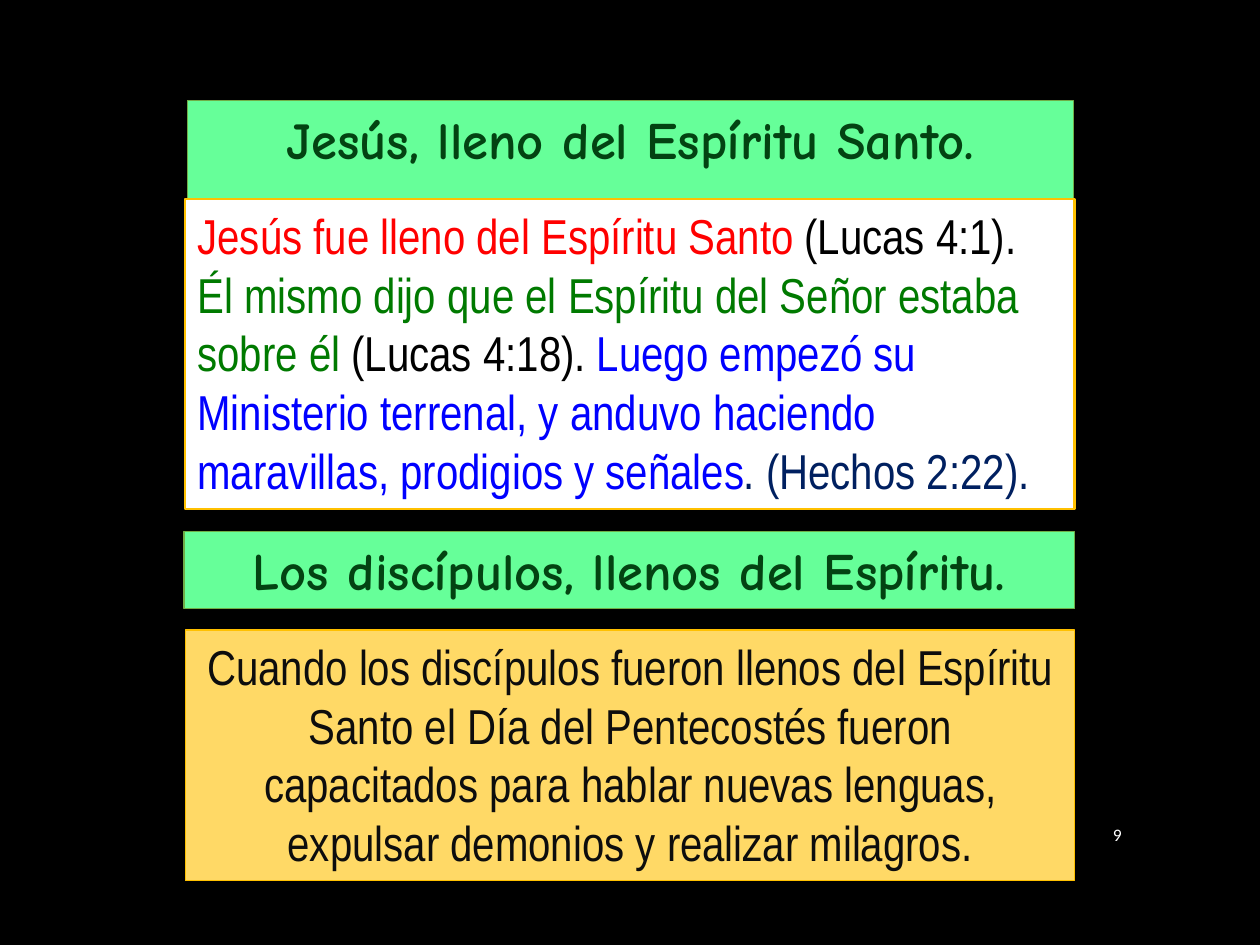
from pptx import Presentation
from pptx import util as u
from pptx.dml.color import RGBColor
from pptx.enum import shapes, text

BLACK = RGBColor(0x00, 0x00, 0x00)
WHITE = RGBColor(0xFF, 0xFF, 0xFF)
RED = RGBColor(0xFF, 0x00, 0x00)
GREEN = RGBColor(0x00, 0x7A, 0x00)
BLUE = RGBColor(0x00, 0x00, 0xFF)
NAVY = RGBColor(0x00, 0x20, 0x60)
INK = RGBColor(0x0D, 0x0D, 0x0D)
FOREST = RGBColor(0x03, 0x43, 0x12)
MINT = RGBColor(0x66, 0xFF, 0x99)
LEAF = RGBColor(0x70, 0xAD, 0x47)
AMBER = RGBColor(0xFF, 0xC0, 0x00)
SAND = RGBColor(0xFF, 0xD9, 0x66)

LEFT, CENTER, RIGHT = text.PP_ALIGN.LEFT, text.PP_ALIGN.CENTER, text.PP_ALIGN.RIGHT
TOP, MIDDLE = text.MSO_ANCHOR.TOP, text.MSO_ANCHOR.MIDDLE


class PageBuilder:
    """Hold the style and the current page, and add each kind of element."""

    heading_font = "Comic Neue"
    body_font = "Arial Narrow"
    number_font = "Calibri"

    def __init__(self, deck):
        self.page = deck.slides.add_slide(deck.slide_layouts[5])
        fill = self.page.background.fill
        fill.solid()
        fill.fore_color.rgb = BLACK

    def add_spans(self, box, spans, font, size, align, bold=False, anchor=TOP):
        frame = box.text_frame
        frame.word_wrap = True
        frame.vertical_anchor = anchor
        para = frame.paragraphs[0]
        para.alignment = align
        for words, color in spans:
            span = para.add_run()
            span.text = words
            span.font.name = font
            span.font.size = u.Pt(size)
            span.font.bold = bold
            span.font.color.rgb = color

    def paint(self, box, fill, line, width):
        box.fill.solid()
        box.fill.fore_color.rgb = fill
        box.line.color.rgb = line
        box.line.width = u.Pt(width)
        box.text_frame.auto_size = text.MSO_AUTO_SIZE.SHAPE_TO_FIT_TEXT

    def rectangle(self, place):
        box = self.page.shapes.add_shape(shapes.MSO_SHAPE.RECTANGLE, *map(u.Inches, place))
        box.shadow.inherit = False
        return box

    def title(self, place, words):
        box = self.page.shapes.title
        box.left, box.top, box.width, box.height = map(u.Inches, place)
        self.format_heading(box, words)

    def heading(self, place, words):
        self.format_heading(self.rectangle(place), words)

    def format_heading(self, box, words):
        self.paint(box, MINT, LEAF, 0.75)
        self.add_spans(box, [(words, FOREST)], self.heading_font, 30, CENTER, bold=True)

    def panel(self, place, spans, fill, width, align):
        box = self.rectangle(place)
        self.paint(box, fill, AMBER, width)
        self.add_spans(box, spans, self.body_font, 28, align)

    def number(self, place, words):
        box = self.page.shapes.add_textbox(*map(u.Inches, place))
        self.add_spans(box, [(words, WHITE)], self.number_font, 10, RIGHT, anchor=MIDDLE)


def main():
    deck = Presentation()
    deck.slide_width, deck.slide_height = u.Inches(10), u.Inches(7.5)
    builder = PageBuilder(deck)
    builder.title((1.49, 0.8, 7.03, 0.61), "Jesús, lleno del Espíritu Santo.")
    builder.panel((1.47, 1.58, 7.06, 2.46), [
        ("Jesús fue lleno del Espíritu Santo ", RED),
        ("(Lucas 4:1). ", BLACK),
        ("Él mismo dijo que el Espíritu del Señor estaba sobre él ", GREEN),
        ("(Lucas 4:18). ", BLACK),
        ("Luego empezó su Ministerio terrenal, y anduvo haciendo "
         "maravillas, prodigios y señales", BLUE),
        (". (Hechos 2:22).", NAVY),
    ], WHITE, 1.5, LEFT)
    builder.heading((1.46, 4.22, 7.07, 0.61), "Los discípulos, llenos del Espíritu.")
    builder.panel((1.47, 5, 7.06, 1.99), [
        ("Cuando los discípulos fueron llenos del Espíritu Santo el Día del "
         "Pentecostés fueron capacitados para hablar nuevas lenguas, "
         "expulsar demonios y realizar milagros.", INK),
    ], SAND, 0.75, CENTER)
    builder.number((8.54, 6.42, 0.46, 0.41), "9")
    deck.save("out.pptx")


if __name__ == "__main__":
    main()
